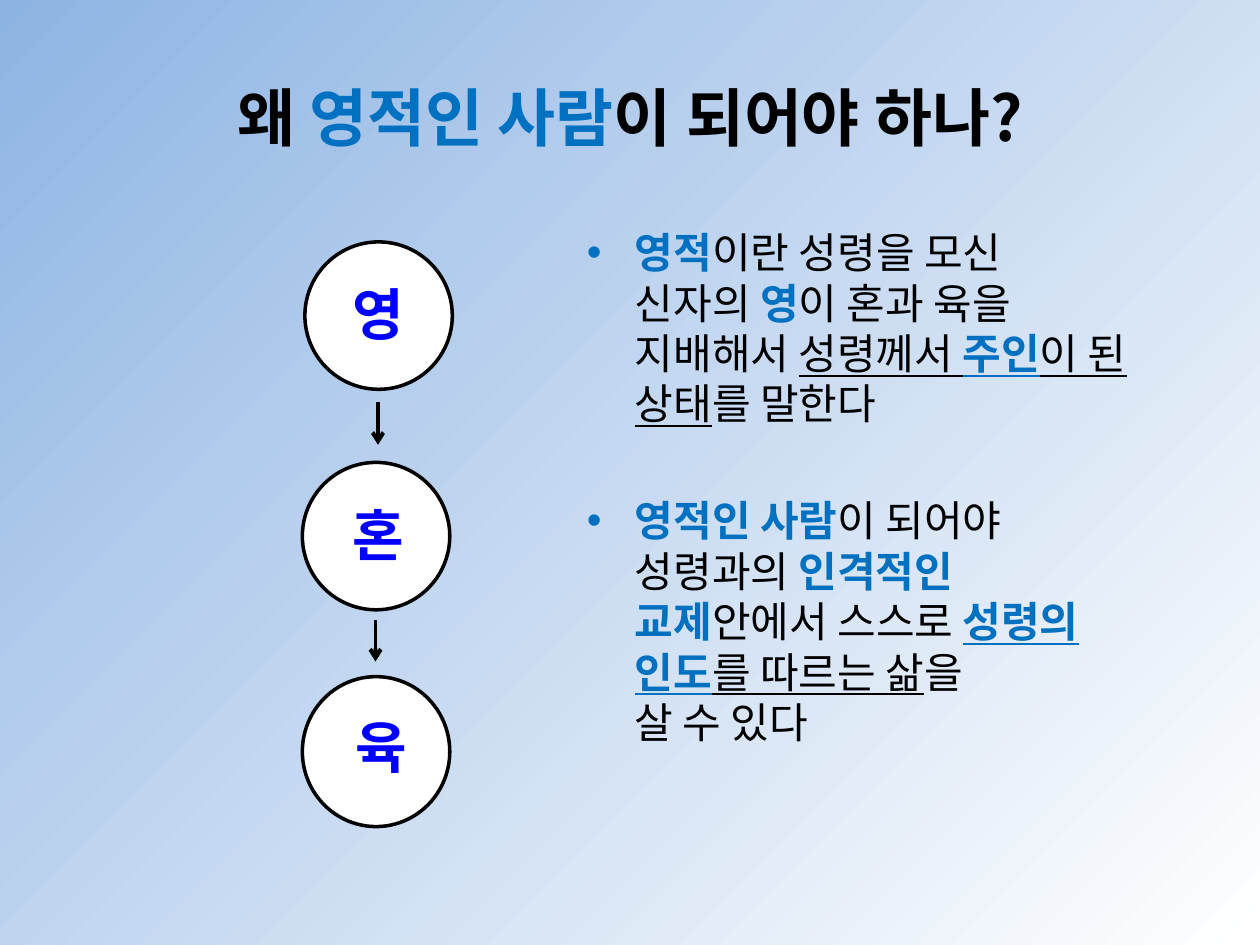
from lxml.etree import SubElement
from pptx import Presentation
from pptx.dml.color import RGBColor
from pptx.enum.shapes import MSO_CONNECTOR, MSO_SHAPE
from pptx.enum.text import MSO_ANCHOR, PP_ALIGN
from pptx.oxml import parse_xml
from pptx.oxml.ns import nsdecls, qn
from pptx.util import Inches, Pt

THEME = {
    "black": "000000", "accent": "0070C0", "label": "0000FF",
    "white": "FFFFFF", "sky": "8EB4E3",
    "font": "Noto Sans CJK KR", "label_font": "Calibri",
    "title_pt": 36, "body_pt": 24, "label_pt": 32,
    "outline_pt": 2, "arrow_pt": 2.25,
}

# Each run is (text, marks): "a" accent colour and bold, "u" underline
TITLE = [("왜 ", ""), ("영적인 사람", "a"), ("이 되어야 하나?", "")]
BULLETS = [
    [("영적", "a"), ("이란 성령을 모신 \n신자의 ", ""), ("영", "a"),
     ("이 혼과 육을 \n지배해서 ", ""), ("성령께서 ", "u"), ("주인", "au"),
     ("이 된 상태", "u"), ("를 말한다", "")],
    [("영적인 사람", "a"), ("이 되어야 \n성령과의 ", ""),
     ("인격적인 \n교제", "a"), ("안에서 스스로 ", ""),
     ("성령의 인도", "au"), ("를 따르는 삶", "u"), ("을 \n살 수 있다", "")],
]
SPACE_BEFORE = [4.8, 38]  # points, one per bullet

# label, circle (left, top, width, height), label position (left, top)
STAGES = [
    ("영", (2.42, 1.92, 1.17, 1.17), (2.7, 2.17)),
    ("혼", (2.4, 3.67, 1.17, 1.17), (2.7, 3.92)),
    ("육", (2.4, 5.37, 1.17, 1.19), (2.72, 5.61)),
]
LABEL_SIZE = (0.55, 0.64)
ARROWS = [(3, 3.19, 3.53), (2.98, 4.92, 5.25)]  # x, top, bottom


def rgb(name):
    return RGBColor.from_string(THEME[name])


def add_text(slide, box, anchor=MSO_ANCHOR.TOP):
    tf = slide.shapes.add_textbox(*map(Inches, box)).text_frame
    tf.word_wrap = True
    tf.vertical_anchor = anchor
    return tf


def set_font(p, font, size):
    """Set size and typeface, including the typeface for Korean glyphs."""
    p.font.name, p.font.size = THEME[font], Pt(THEME[size])
    latin = p.font._element.find(qn("a:latin"))
    latin.addnext(parse_xml(
        f'<a:ea {nsdecls("a")} typeface="{THEME[font]}"/>'))


def add_runs(p, runs, bold=False):
    for text, marks in runs:
        for i, line in enumerate(text.split("\n")):
            if i:
                p.add_line_break()
            r = p.add_run()
            r.text = line
            r.font.name = THEME["font"]
            SubElement(r.font._element, qn("a:ea"), typeface=THEME["font"])
            r.font.bold = bold or "a" in marks
            r.font.underline = "u" in marks
            r.font.color.rgb = rgb("accent" if "a" in marks else "black")


def add_bullet(p):
    pPr = p._p.get_or_add_pPr()
    pPr.set("marL", str(Inches(0.38)))
    pPr.set("indent", str(-Inches(0.38)))
    bullet = parse_xml(f'<a:buChar {nsdecls("a")} char="•"/>')
    pPr.find(qn("a:defRPr")).addprevious(bullet)
    bullet.addprevious(parse_xml(
        f'<a:buFont {nsdecls("a")} typeface="Arial"/>'))


def set_background(slide):
    """Fill with a gradient that spreads from the bottom right corner."""
    slide.background.fill.solid()
    bgPr = slide.background._cSld.bg.bgPr
    bgPr.replace(bgPr[0], parse_xml(
        f'<a:gradFill {nsdecls("a")} rotWithShape="1"><a:gsLst>'
        f'<a:gs pos="0"><a:srgbClr val="{THEME["white"]}"/></a:gs>'
        f'<a:gs pos="100000"><a:srgbClr val="{THEME["sky"]}"/></a:gs>'
        '</a:gsLst><a:path path="circle">'
        '<a:fillToRect l="100000" t="100000"/></a:path></a:gradFill>'))


def add_circle(slide, box):
    sp = slide.shapes.add_shape(MSO_SHAPE.OVAL, *map(Inches, box))
    sp.shadow.inherit = False
    sp.fill.solid()
    sp.fill.fore_color.rgb = rgb("white")
    sp.line.color.rgb = rgb("black")
    sp.line.width = Pt(THEME["outline_pt"])


def add_arrow(slide, x, top, bottom):
    cx = slide.shapes.add_connector(
        MSO_CONNECTOR.STRAIGHT, *map(Inches, (x, top, x, bottom)))
    cx.line.color.rgb = rgb("black")
    cx.line.width = Pt(THEME["arrow_pt"])
    SubElement(cx.line._get_or_add_ln(), qn("a:tailEnd"), type="arrow")
    SubElement(cx._element.spPr, qn("a:effectLst"))


def main():
    prs = Presentation()
    prs.slide_width, prs.slide_height = Inches(10), Inches(7.5)
    slide = prs.slides.add_slide(prs.slide_layouts[6])
    set_background(slide)

    p = add_text(slide, (0.5, 0.3, 9, 1.25), MSO_ANCHOR.MIDDLE).paragraphs[0]
    p.alignment = PP_ALIGN.CENTER
    set_font(p, "font", "title_pt")
    add_runs(p, TITLE, bold=True)
    for r in p.runs:
        r.font.size = Pt(THEME["title_pt"])

    tf = add_text(slide, (4.56, 1.75, 4.63, 4.95))
    for i, (runs, before) in enumerate(zip(BULLETS, SPACE_BEFORE)):
        p = tf.add_paragraph() if i else tf.paragraphs[0]
        p.space_before = Pt(before)
        set_font(p, "font", "body_pt")
        add_bullet(p)
        add_runs(p, runs)
        for r in p.runs:
            r.font.size = Pt(THEME["body_pt"])

    for _, circle, _ in STAGES:
        add_circle(slide, circle)
    for arrow in ARROWS:
        add_arrow(slide, *arrow)
    for label, _, at in STAGES:
        p = add_text(slide, at + LABEL_SIZE).paragraphs[0]
        r = p.add_run()
        r.text = label
        r.font.name, r.font.size = THEME["label_font"], Pt(THEME["label_pt"])
        r.font.bold = True
        r.font.color.rgb = rgb("label")

    prs.save("out.pptx")


if __name__ == "__main__":
    main()
